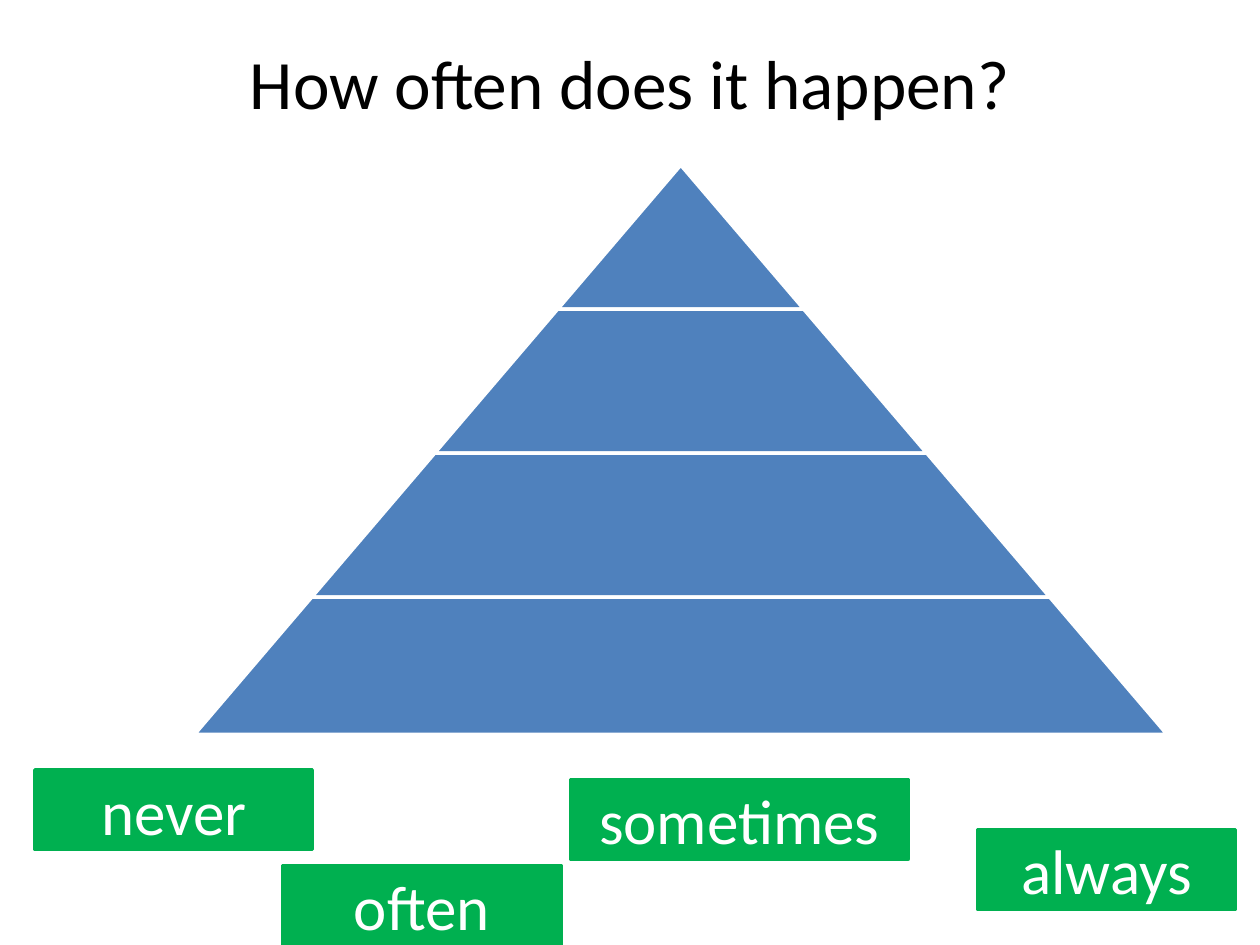
from pptx import Presentation
from pptx.dml.color import RGBColor
from pptx.enum.shapes import MSO_SHAPE
from pptx.enum.text import MSO_ANCHOR, PP_ALIGN
from pptx.util import Pt

COLORS = {"title": "000000", "tier": "4F81BD", "gap": "FFFFFF",
          "card": "00B050", "word": "FFFFFF"}
FONT = "Calibri"

APEX_X, APEX_Y = 389, 94.3
SLOPE = 0.854  # horizontal run of a pyramid side per point of height
TIER_HEIGHTS = [82.3, 82.3, 82.3, 78.5]

CARD_HEIGHT = 45.5
CARDS = [  # word, left, top, width
    ("never", 20, 440, 158.5),
    ("often", 161.5, 494.5, 159),
    ("sometimes", 326, 445.5, 193),
    ("always", 558.5, 474, 147.5),
]


def color(name):
    return RGBColor.from_string(COLORS[name])


def write_text(shape, text, *, size, fill):
    """Put one centred line of text in the middle of a shape."""
    frame = shape.text_frame
    frame.word_wrap = True
    frame.vertical_anchor = MSO_ANCHOR.MIDDLE
    paragraph = frame.paragraphs[0]
    paragraph.alignment = PP_ALIGN.CENTER
    run = paragraph.add_run()
    run.text = text
    run.font.name = FONT
    run.font.size = Pt(size)
    run.font.color.rgb = color(fill)


def add_block(slide, kind, left, top, width, height, *, fill, line):
    block = slide.shapes.add_shape(kind, Pt(left), Pt(top), Pt(width), Pt(height))
    block.shadow.inherit = False
    block.fill.solid()
    block.fill.fore_color.rgb = color(fill)
    block.line.color.rgb = color(line)
    block.line.width = Pt(2)
    return block


def add_title(slide, text):
    title = slide.shapes.add_textbox(Pt(36.5), Pt(21.5), Pt(647), Pt(50))
    write_text(title, text, size=39.6, fill="title")


def add_pyramid(slide):
    """Stack trapezoids whose sides all run on from the apex."""
    depth = 0
    for height in TIER_HEIGHTS:
        top = APEX_Y + depth
        depth += height
        half_width = SLOPE * depth
        tier = add_block(slide, MSO_SHAPE.TRAPEZOID, APEX_X - half_width, top,
                         2 * half_width, height, fill="tier", line="gap")
        tier.adjustments[0] = SLOPE


def add_card(slide, word, left, top, width):
    card = add_block(slide, MSO_SHAPE.RECTANGLE, left, top, width, CARD_HEIGHT,
                     fill="card", line="card")
    write_text(card, word, size=36, fill="word")


def main():
    deck = Presentation()
    deck.slide_width, deck.slide_height = Pt(720), Pt(540)
    slide = deck.slides.add_slide(deck.slide_layouts[6])
    add_title(slide, "How often does it happen?")
    add_pyramid(slide)
    for card in CARDS:
        add_card(slide, *card)
    deck.save("out.pptx")


if __name__ == "__main__":
    main()
